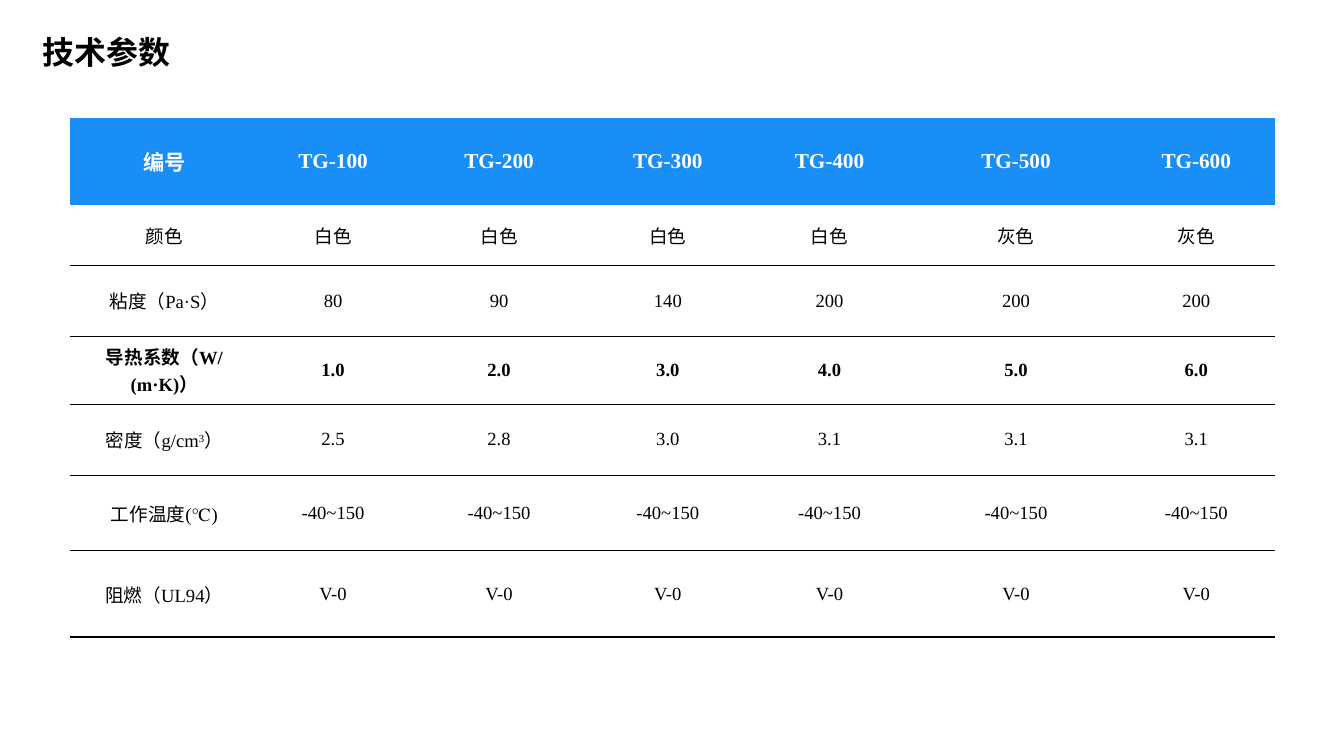
import lxml.etree
import pptx
import pptx.dml.color
import pptx.enum.text
import pptx.oxml.ns
import pptx.util

PLAIN_TABLE_STYLE = "{2D5ABB26-0587-4C30-8999-92F81FD0307C}"


def color(hex_code):
    """Turn a hex string into a colour."""
    return pptx.dml.color.RGBColor.from_string(hex_code)


def add_xml(parent, tag, **attributes):
    """Append a drawing element to its parent."""
    return lxml.etree.SubElement(parent, pptx.oxml.ns.qn(tag), attributes)


class ParameterSlide:
    """Hold the style and the current slide."""

    chinese_font = "Noto Sans CJK SC"
    table_font = "Times New Roman"
    ink = "000000"
    header_ink = "FFFFFF"
    header_fill = "188EF6"

    def __init__(self, presentation):
        """Add a blank slide to the presentation."""
        self.slide = presentation.slides.add_slide(presentation.slide_layouts[6])

    def add_run(self, paragraph, wording, font, size, ink, bold, raised=False):
        """Add one styled run to a paragraph."""
        run = paragraph.add_run()
        run.text = wording
        run.font.name = font
        run.font.size = pptx.util.Pt(size)
        run.font.bold = bold
        run.font.color.rgb = color(ink)
        properties = run._r.get_or_add_rPr()
        add_xml(properties, "a:ea", typeface=self.chinese_font)
        if raised:
            properties.set("baseline", "30000")

    def add_title(self, wording, left, top, width, height):
        """Add the slide title."""
        title = self.slide.shapes.add_textbox(*map(pptx.util.Cm, (left, top, width, height)))
        title.text_frame.word_wrap = False
        title.text_frame.auto_size = pptx.enum.text.MSO_AUTO_SIZE.SHAPE_TO_FIT_TEXT
        self.add_run(title.text_frame.paragraphs[0], wording, self.chinese_font, 24, self.ink, True)

    def add_rule(self, cell):
        """Draw the thin line below a cell."""
        rule = add_xml(cell._tc.get_or_add_tcPr(), "a:lnB", w=str(pptx.util.Pt(1)))
        add_xml(add_xml(rule, "a:solidFill"), "a:srgbClr", val=self.ink)

    def fill_cell(self, cell, content, header, bold):
        """Write and style one cell, raising every second part of a tuple."""
        cell.vertical_anchor = pptx.enum.text.MSO_ANCHOR.MIDDLE
        if header:
            cell.fill.solid()
            cell.fill.fore_color.rgb = color(self.header_fill)
        else:
            self.add_rule(cell)
            cell.fill.background()
        paragraph = cell.text_frame.paragraphs[0]
        paragraph.alignment = pptx.enum.text.PP_ALIGN.CENTER
        size, ink = (16, self.header_ink) if header else (14, self.ink)
        parts = content if isinstance(content, tuple) else (content,)
        for index, part in enumerate(parts):
            self.add_run(paragraph, part, self.table_font, size, ink, bold, index % 2 == 1)

    def add_table(self, records, bold_rows, left, top, widths, heights):
        """Add the table of parameters."""
        frame = self.slide.shapes.add_table(
            len(heights), len(widths),
            *map(pptx.util.Cm, (left, top, sum(widths), sum(heights))))
        table = frame.table
        table.horz_banding = False
        style_id = table._tbl.tblPr.find(pptx.oxml.ns.qn("a:tableStyleId"))
        style_id.text = PLAIN_TABLE_STYLE
        for column, width in zip(table.columns, widths):
            column.width = pptx.util.Cm(width)
        for row, height in zip(table.rows, heights):
            row.height = pptx.util.Cm(height)
        for row_index, record in enumerate(records):
            for column_index, content in enumerate(record):
                self.fill_cell(table.cell(row_index, column_index), content,
                               row_index == 0, row_index in bold_rows)


def main():
    """Build the technical parameter slide."""
    presentation = pptx.Presentation()
    presentation.slide_width = pptx.util.Cm(35.71)
    presentation.slide_height = pptx.util.Cm(20.09)

    parameters = [
        ["编号"] + [f"TG-{grade}00" for grade in range(1, 7)],
        ["颜色"] + ["白色"] * 4 + ["灰色"] * 2,
        ["粘度（Pa·S）", "80", "90", "140", "200", "200", "200"],
        ["导热系数（W/(m·K)）"] + [f"{grade}.0" for grade in range(1, 7)],
        [("密度（g/cm", "3", "）"), "2.5", "2.8", "3.0", "3.1", "3.1", "3.1"],
        ["工作温度(℃)"] + ["-40~150"] * 6,
        ["阻燃（UL94）"] + ["V-0"] * 6,
    ]
    page = ParameterSlide(presentation)
    page.add_title("技术参数", 0.89, 0.74, 3.96, 1.27)
    page.add_table(parameters, {0, 3}, 1.85, 3.14,
                   [5.03, 3.94, 4.88, 4.09, 4.5, 5.41, 4.17],
                   [2.31, 1.6, 1.89, 1.8, 1.89, 2.01, 2.29])
    presentation.save("out.pptx")


if __name__ == "__main__":
    main()
